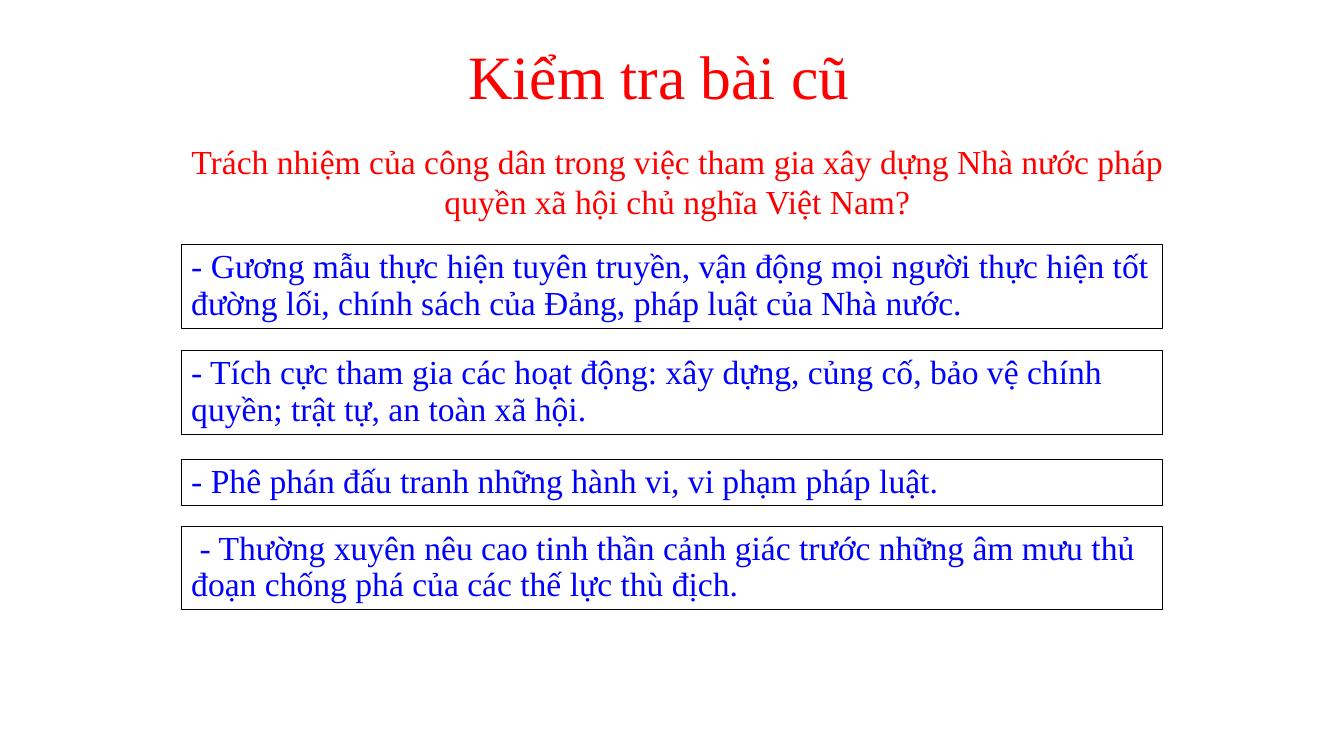
import pptx
import pptx.util
import pptx.dml.color
import pptx.enum.shapes
import pptx.enum.text
from pptx.util import Cm, Pt

COLORS = {"red": "FF0000", "blue": "0000FF", "black": "000000"}
ALIGN = pptx.enum.text.PP_ALIGN


def rgb(name):
    return pptx.dml.color.RGBColor.from_string(COLORS[name])


def write(sp, text, size, color, **paragraph_format):
    tf = sp.text_frame
    frame_format = {
        "word_wrap": True,
        "auto_size": pptx.enum.text.MSO_AUTO_SIZE.SHAPE_TO_FIT_TEXT,
        "vertical_anchor": pptx.enum.text.MSO_ANCHOR.TOP,
    }
    for key, value in frame_format.items():
        setattr(tf, key, value)
    p = tf.paragraphs[0]
    for key, value in paragraph_format.items():
        setattr(p, key, value)
    r = p.add_run()
    r.text = text
    for key, value in {"name": "Times New Roman", "size": Pt(size)}.items():
        setattr(r.font, key, value)
    r.font.color.rgb = rgb(color)


prs = pptx.Presentation()
prs.slide_width, prs.slide_height = Cm(33.87), Cm(19.05)
s = prs.slides.add_slide(prs.slide_layouts[6])

# Title and question
headings = [
    ("Kiểm tra bài cũ", 44, 9.53, 0.84, 14.17, 2.13),
    ("Trách nhiệm của công dân trong việc tham gia xây dựng Nhà nước pháp "
     "quyền xã hội chủ nghĩa Việt Nam?", 24, 4.55, 3.43, 25.04, 2.31),
]
for text, size, left, top, width, height in headings:
    sp = s.shapes.add_textbox(Cm(left), Cm(top), Cm(width), Cm(height))
    write(sp, text, size, "red", alignment=ALIGN.CENTER)

# Framed answers
answers = [
    ("- Gương mẫu thực hiện tuyên truyền, vận động mọi người thực hiện tốt "
     "đường lối, chính sách của Đảng, pháp luật của Nhà nước.", 6.17, 2.11),
    ("- Tích cực tham gia các hoạt động: xây dựng, củng cố, bảo vệ chính "
     "quyền; trật tự, an toàn xã hội.", 8.84, 2.11),
    ("- Phê phán đấu tranh những hành vi, vi phạm pháp luật.", 11.58, 1.17),
    (" - Thường xuyên nêu cao tinh thần cảnh giác trước những âm mưu thủ "
     "đoạn chống phá của các thế lực thù địch.", 13.26, 2.11),
]
for text, top, height in answers:
    sp = s.shapes.add_shape(pptx.enum.shapes.MSO_SHAPE.RECTANGLE,
                            Cm(4.57), Cm(top), Cm(24.74), Cm(height))
    sp.shadow.inherit = False
    sp.fill.background()
    sp.line.color.rgb = rgb("black")
    sp.line.width = Pt(0.75)
    write(sp, text, 24, "blue", alignment=ALIGN.LEFT, line_spacing=0.9)

prs.save("out.pptx")
